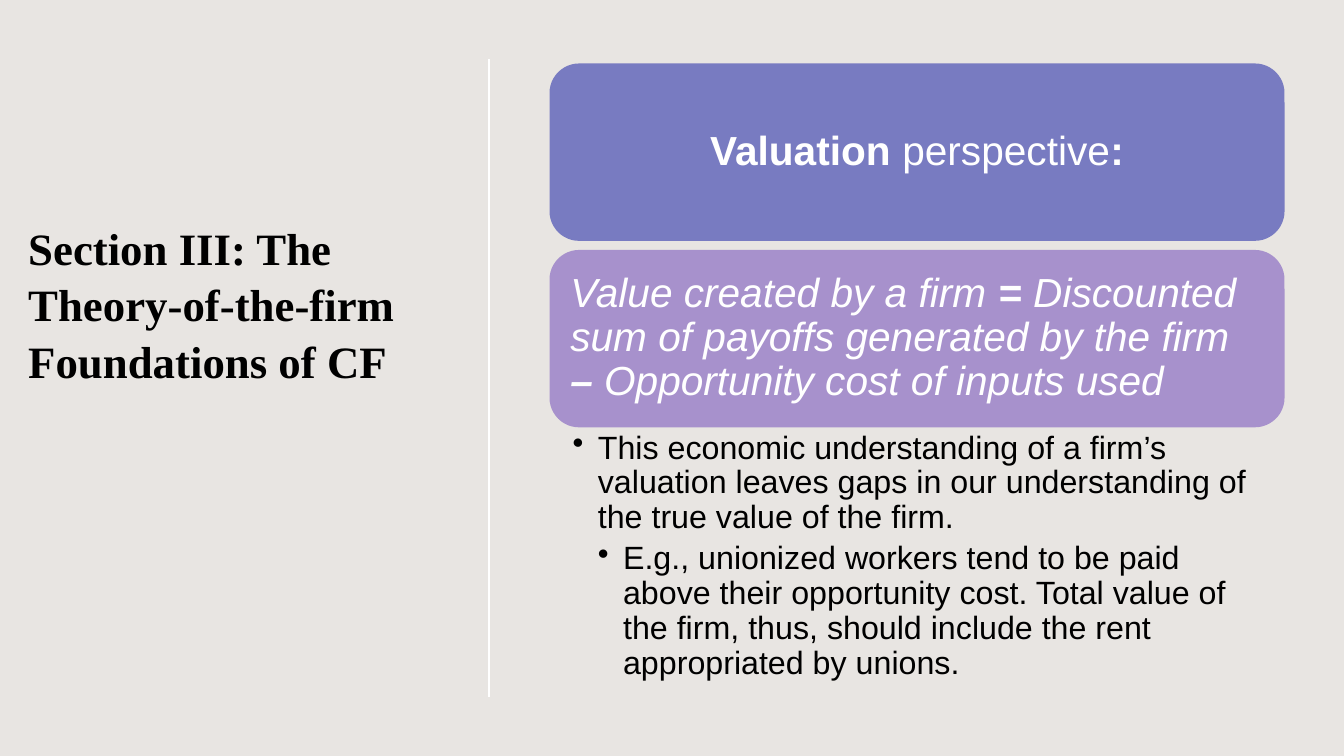
from lxml import etree
from pptx import Presentation
from pptx.dml.color import RGBColor
from pptx.enum.shapes import MSO_CONNECTOR, MSO_SHAPE
from pptx.enum.text import MSO_ANCHOR, MSO_AUTO_SIZE, PP_ALIGN
from pptx.oxml.ns import qn
from pptx.util import Inches, Pt

BACKGROUND = RGBColor(0xE8, 0xE5, 0xE2)
BLUE = RGBColor(0x78, 0x7B, 0xC1)
PURPLE = RGBColor(0xA7, 0x91, 0xCC)
WHITE = RGBColor(0xFF, 0xFF, 0xFF)
BLACK = RGBColor(0, 0, 0)

PERSPECTIVE = [("Valuation ", True), ("perspective", False), (":", True)]
VALUE_FORMULA = [
    ("Value created by a firm ", False),
    ("=", True),
    (" Discounted sum of payoffs generated by the firm ", False),
    ("– ", True),
    ("Opportunity cost of inputs used", False),
]
REMARKS = [
    "This economic understanding of a firm’s valuation leaves gaps in our "
    "understanding of the true value of the firm.",
    "E.g., unionized workers tend to be paid above their opportunity cost. "
    "Total value of the firm, thus, should include the rent appropriated by unions.",
]


def format_run(r, font, size, color, bold=False, italic=False):
    r.font.name = font
    r.font.size = Pt(size)
    r.font.color.rgb = color
    r.font.bold = bold
    r.font.italic = italic


def set_margins(tf, side, top, bottom):
    tf.margin_left = tf.margin_right = Inches(side)
    tf.margin_top, tf.margin_bottom = Inches(top), Inches(bottom)


def place_title(slide, x, y, w, h):
    title = slide.shapes.title
    title.left, title.top = Inches(x), Inches(y)
    title.width, title.height = Inches(w), Inches(h)
    tf = title.text_frame
    tf.text = "Section III: The Theory-of-the-firm Foundations of CF"
    tf.word_wrap = True
    tf.auto_size = MSO_AUTO_SIZE.NONE
    tf.vertical_anchor = MSO_ANCHOR.TOP
    set_margins(tf, 0.1, 1.12, 0.05)
    p = tf.paragraphs[0]
    p.alignment = PP_ALIGN.LEFT
    p.line_spacing = 1.05
    format_run(p.runs[0], "Times New Roman", 32, BLACK, bold=True)


def add_divider(slide, x, top, bottom):
    line = slide.shapes.add_connector(
        MSO_CONNECTOR.STRAIGHT, Inches(x), Inches(top), Inches(x), Inches(bottom))
    line.line.color.rgb = WHITE
    line.line.width = Pt(1)
    etree.SubElement(line._element.spPr, qn("a:effectLst"))


def add_card(slide, x, y, w, h, fill, parts, align, italic):
    """Add a rounded card; parts are (text, bold) pairs."""
    sp = slide.shapes.add_shape(
        MSO_SHAPE.ROUNDED_RECTANGLE, Inches(x), Inches(y), Inches(w), Inches(h))
    sp.shadow.inherit = False
    sp.fill.solid()
    sp.fill.fore_color.rgb = fill
    sp.line.fill.background()
    tf = sp.text_frame
    tf.word_wrap = True
    tf.vertical_anchor = MSO_ANCHOR.MIDDLE
    # The rounded corners already inset the text by about 0.09"
    set_margins(tf, 0.12, 0.12, 0.12)
    p = tf.paragraphs[0]
    p.alignment = align
    p.line_spacing = 0.9
    for text, bold in parts:
        r = p.add_run()
        r.text = text
        format_run(r, "Arial", 29, WHITE, bold, italic)


def add_remarks(slide, x, y, w, h):
    box = slide.shapes.add_textbox(Inches(x), Inches(y), Inches(w), Inches(h))
    tf = box.text_frame
    tf.word_wrap = True
    set_margins(tf, 0.23, 0.04, 0.04)
    for level, text in enumerate(REMARKS, 1):
        p = tf.paragraphs[0] if level == 1 else tf.add_paragraph()
        p.text = text
        p.level = level
        p.line_spacing = 0.9
        p.space_after = Pt(4.6)
        format_run(p.runs[0], "Arial", 23, BLACK)
        pPr = p._p.get_or_add_pPr()
        pPr.set("marL", str(Inches(0.25 * level)))
        pPr.set("indent", str(Inches(-0.25)))
        etree.SubElement(pPr, qn("a:buChar"), char="•")


def add_valuation_panel(slide, x, y, w):
    card_h, gap = 1.76, 0.09
    formula_y = y + card_h + gap
    add_card(slide, x, y, w, card_h, BLUE, PERSPECTIVE, PP_ALIGN.CENTER, False)
    add_card(slide, x, formula_y, w, card_h, PURPLE, VALUE_FORMULA, PP_ALIGN.LEFT, True)
    add_remarks(slide, x, formula_y + card_h, w, 2.63)


def main():
    prs = Presentation()
    prs.slide_width, prs.slide_height = Inches(13.33), Inches(7.5)
    slide = prs.slides.add_slide(prs.slide_layouts[5])
    slide.background.fill.solid()
    slide.background.fill.fore_color.rgb = BACKGROUND
    place_title(slide, 0.18, 1.04, 3.96, 5.13)
    add_divider(slide, 4.85, 0.59, 6.91)
    add_valuation_panel(slide, 5.45, 0.63, 7.29)
    prs.save("out.pptx")


if __name__ == "__main__":
    main()
